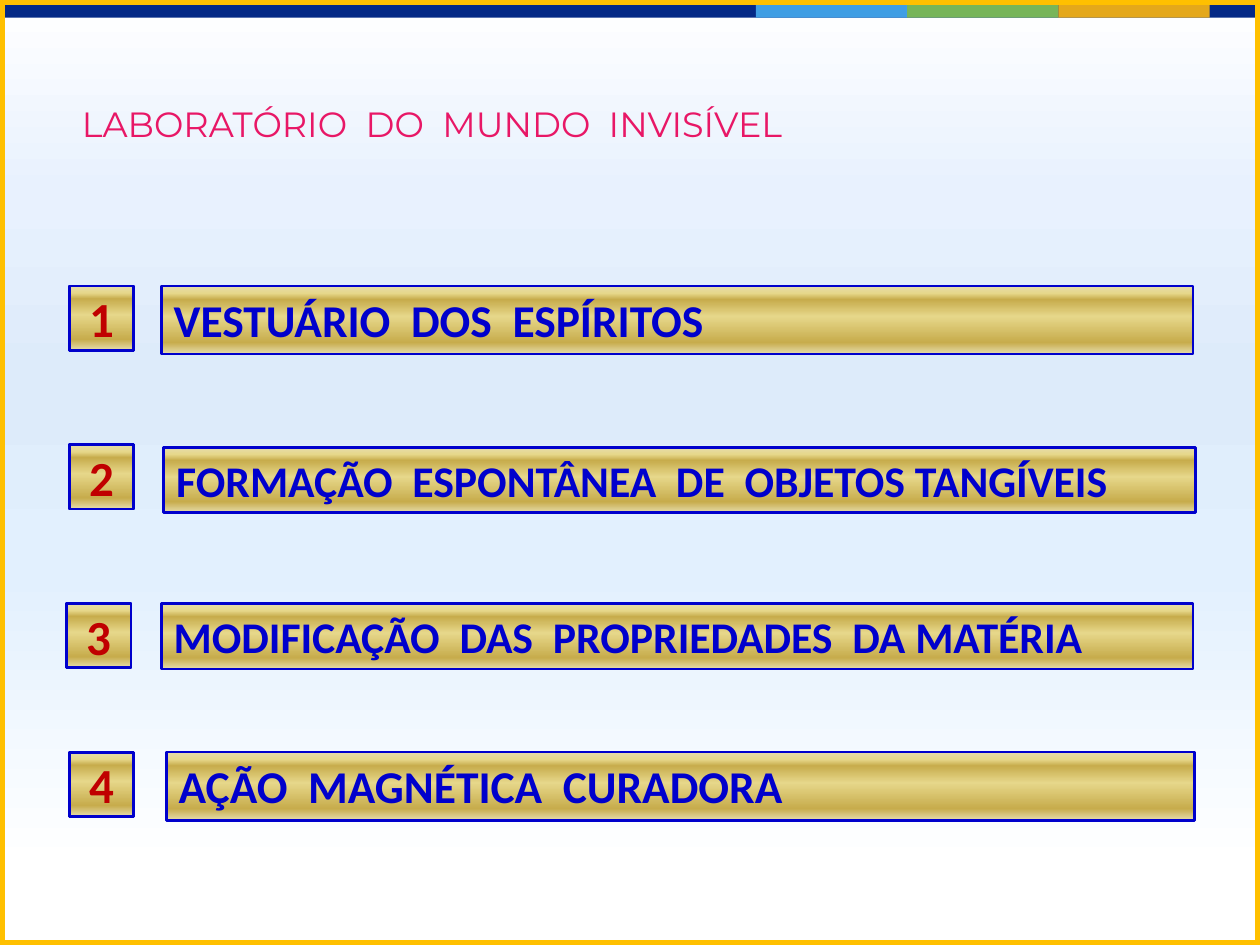
from lxml.etree import SubElement
from pptx import Presentation
from pptx.dml.color import RGBColor
from pptx.enum.shapes import MSO_SHAPE as Shape
from pptx.enum.text import MSO_ANCHOR as Anchor, PP_ALIGN as Align
from pptx.oxml.ns import qn
from pptx.util import Inches, Pt

TITLE = "LABORATÓRIO  DO  MUNDO  INVISÍVEL"
# text, type size, number left and top, bar left, top, width and height
TOPICS = [
    ("VESTUÁRIO  DOS  ESPÍRITOS", 26, (0.55, 2.27), (1.28, 2.27, 8.19, 0.54)),
    ("FORMAÇÃO  ESPONTÂNEA  DE  OBJETOS TANGÍVEIS", 25,
     (0.55, 3.53), (1.3, 3.55, 8.19, 0.52)),
    ("MODIFICAÇÃO  DAS  PROPRIEDADES  DA MATÉRIA", 25,
     (0.53, 4.79), (1.28, 4.79, 8.19, 0.52)),
    ("AÇÃO  MAGNÉTICA  CURADORA", 26, (0.55, 5.97), (1.32, 5.97, 8.16, 0.54)),
]
THEME = {
    "head": ("Montserrat", 20, "E81766", False),
    "body": "Calibri",
    "num": 28,
    "red": "C00000",
    "blue": "0000CC",
    "frame": "FFC000",
    "band": "042986",
    "tabs": ["3F9EE4", "77B559", "E4A81B"],
    "sky": [(0, "FFFFFF"), (22, "E8F1FE"), (44, "DDEBFA"),
            (66, "E2F0FE"), (100, "FFFFFF")],
    "gold": [(0, "E6DCAC"), (11, "E6D78A"), (20, "C7AC4C"),
             (45, "E6D78A"), (83, "C7AC4C"), (100, "E6DCAC")],
}
SIDE = 0.51
TAB = 1.2


def shade(shape, stops):
    """Fill from top to bottom with any number of colour stops."""
    shape.fill.gradient()
    grad = shape._element.spPr.find(qn("a:gradFill"))
    for child in list(grad):
        grad.remove(child)
    row = SubElement(grad, qn("a:gsLst"))
    for pos, tint in stops:
        stop = SubElement(row, qn("a:gs"), pos=str(pos * 1000))
        SubElement(stop, qn("a:srgbClr"), val=tint)
    SubElement(grad, qn("a:lin"), ang="5400000", scaled="0")


def add_box(slide, at, fill=None, line=None, width=1.5, kind=Shape.RECTANGLE):
    box = slide.shapes.add_shape(kind, *map(Inches, at))
    box.shadow.inherit = False
    if isinstance(fill, list):
        shade(box, fill)
    elif fill:
        box.fill.solid()
        box.fill.fore_color.rgb = RGBColor.from_string(fill)
    else:
        box.fill.background()
    if line:
        box.line.color.rgb = RGBColor.from_string(line)
        box.line.width = Pt(width)
    else:
        box.line.fill.background()
    return box


def write(shape, text, style, align=Align.LEFT, anchor=Anchor.TOP, wrap=True):
    face, size, tint, bold = style
    frame = shape.text_frame
    frame.word_wrap = wrap
    frame.vertical_anchor = anchor
    para = frame.paragraphs[0]
    para.alignment = align
    run = para.add_run()
    run.text = text
    font = run.font
    font.name, font.size, font.bold = face, Pt(size), bold
    font.color.rgb = RGBColor.from_string(tint)


def add_topic(slide, num, text, size, spot, at):
    gold, blue, face = THEME["gold"], THEME["blue"], THEME["body"]
    bar = add_box(slide, at, gold, blue)
    write(bar, text, (face, size, blue, True))
    key = add_box(slide, (*spot, SIDE, SIDE), gold, blue, kind=Shape.BEVEL)
    key.adjustments[0] = 0
    write(key, str(num), (face, THEME["num"], THEME["red"], True),
          Align.CENTER, Anchor.MIDDLE)


def main():
    deck = Presentation()
    deck.slide_width, deck.slide_height = Inches(10), Inches(7.5)
    slide = deck.slides.add_slide(deck.slide_layouts[5])

    add_box(slide, (-0.01, 0, 10, 6.88), THEME["sky"])
    add_box(slide, (-0.01, -0.02, 10.01, 0.16), THEME["band"])
    for i, tint in enumerate(THEME["tabs"]):
        add_box(slide, (6 + i * TAB, -0.02, TAB, 0.16), tint)
    add_box(slide, (0, 0, 10, 7.5), line=THEME["frame"], width=6)

    title = slide.shapes.title
    title.left, title.top = Inches(0.55), Inches(0.76)
    title.width, title.height = Inches(8.94), Inches(0.71)
    write(title, TITLE, THEME["head"], wrap=False)
    slide.shapes._spTree.append(title._element)  # bring above the sky

    for num, topic in enumerate(TOPICS, 1):
        add_topic(slide, num, *topic)
    deck.save("out.pptx")


if __name__ == "__main__":
    main()
